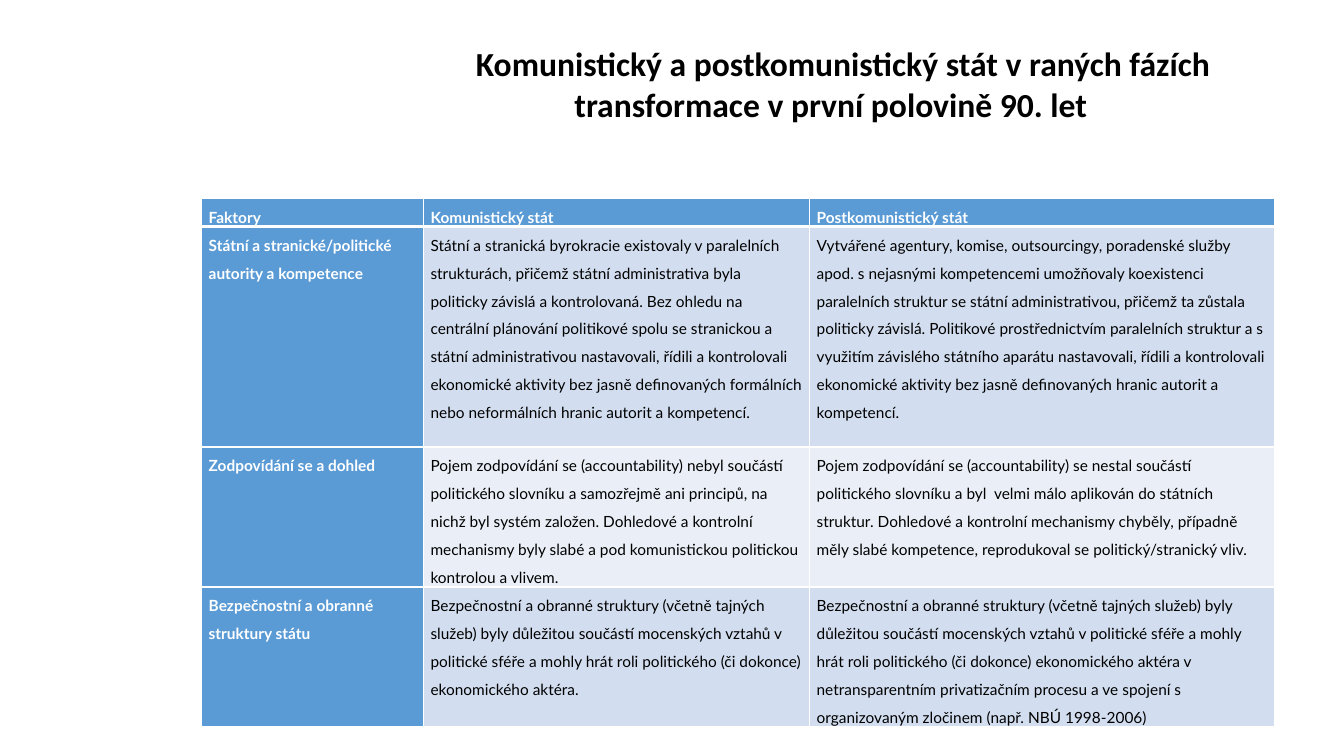
from lxml.etree import SubElement
from pptx import Presentation
from pptx.dml.color import RGBColor
from pptx.enum.text import MSO_VERTICAL_ANCHOR as Anchor, PP_PARAGRAPH_ALIGNMENT as Align
from pptx.oxml.ns import qn
from pptx.util import Cm, Pt

WHITE = RGBColor(0xFF, 0xFF, 0xFF)
BLACK = RGBColor(0x00, 0x00, 0x00)
BLUE = RGBColor(0x5B, 0x9B, 0xD5)
BAND_DARK = RGBColor(0xD2, 0xDE, 0xEF)
BAND_LIGHT = RGBColor(0xEA, 0xEF, 0xF7)

TITLE = "Komunistický a postkomunistický stát v raných fázích transformace v první polovině 90. let"

FACTORS = [
    ("Faktory", "Komunistický stát", "Postkomunistický stát"),
    (
        "Státní a stranické/politické autority a kompetence",
        "Státní a stranická byrokracie existovaly v paralelních strukturách, přičemž státní "
        "administrativa byla politicky závislá a kontrolovaná. Bez ohledu na centrální plánování "
        "politikové spolu se stranickou a státní administrativou nastavovali, řídili a kontrolovali "
        "ekonomické aktivity bez jasně definovaných formálních nebo neformálních hranic autorit "
        "a kompetencí.",
        "Vytvářené agentury, komise, outsourcingy, poradenské služby apod. s nejasnými kompetencemi "
        "umožňovaly koexistenci paralelních struktur se státní administrativou, přičemž ta zůstala "
        "politicky závislá. Politikové prostřednictvím paralelních struktur a s využitím závislého "
        "státního aparátu nastavovali, řídili a kontrolovali ekonomické aktivity bez jasně "
        "definovaných hranic autorit a kompetencí.",
    ),
    (
        "Zodpovídání se a dohled",
        "Pojem zodpovídání se (accountability) nebyl součástí politického slovníku a samozřejmě ani "
        "principů, na nichž byl systém založen. Dohledové a kontrolní mechanismy byly slabé a pod "
        "komunistickou politickou kontrolou a vlivem.",
        "Pojem zodpovídání se (accountability) se nestal součástí politického slovníku a byl  velmi "
        "málo aplikován do státních struktur. Dohledové a kontrolní mechanismy chyběly, případně "
        "měly slabé kompetence, reprodukoval se politický/stranický vliv.",
    ),
    (
        "Bezpečnostní a obranné struktury státu",
        "Bezpečnostní a obranné struktury (včetně tajných služeb) byly důležitou součástí mocenských "
        "vztahů v politické sféře a mohly hrát roli politického (či dokonce) ekonomického aktéra.",
        "Bezpečnostní a obranné struktury (včetně tajných služeb) byly důležitou součástí mocenských "
        "vztahů v politické sféře a mohly hrát roli politického (či dokonce) ekonomického aktéra "
        "v netransparentním privatizačním procesu a ve spojení s organizovaným zločinem "
        "(např. NBÚ 1998-2006)",
    ),
]


class SlideBuilder:
    title_font, title_size = "Calibri", Pt(24)
    table_font, table_size = "Lato", Pt(11)

    def __init__(self, slide):
        self.slide = slide

    def add_run(self, paragraph, text, font, size, color, bold):
        run = paragraph.add_run()
        run.text = text
        run.font.name = font
        run.font.size = size
        run.font.bold = bold
        run.font.color.rgb = color

    def add_title(self, text, left, top, width, height):
        frame = self.slide.shapes.add_textbox(left, top, width, height).text_frame
        frame.word_wrap = True
        frame.vertical_anchor = Anchor.MIDDLE
        heading = frame.paragraphs[0]
        heading.alignment = Align.CENTER
        heading._p.get_or_add_pPr().set("indent", str(Cm(0.61)))
        self.add_run(heading, text, self.title_font, self.title_size, BLACK, True)

    def add_border(self, cell, side, width):
        line = SubElement(cell._tc.get_or_add_tcPr(), qn(f"a:ln{side}"), w=str(Pt(width)))
        fill = SubElement(line, qn("a:solidFill"))
        SubElement(fill, qn("a:srgbClr"), val=str(WHITE))

    def fill_cell(self, cell, text, row, column):
        is_header = row == 0
        is_label = is_header or column == 0
        cell.margin_left = cell.margin_right = Cm(0.18)
        cell.margin_top = cell.margin_bottom = 0
        cell.vertical_anchor = Anchor.BOTTOM if is_header else Anchor.TOP
        widths = {"L": 1, "R": 1, "T": 3 if row == 1 else 1, "B": 3 if is_header else 1}
        for side, width in widths.items():
            self.add_border(cell, side, width)
        cell.fill.solid()
        band = BAND_DARK if row % 2 else BAND_LIGHT
        cell.fill.fore_color.rgb = BLUE if is_label else band
        paragraph = cell.text_frame.paragraphs[0]
        paragraph.line_spacing = 1.5
        paragraph.space_after = Pt(6)
        color = WHITE if is_label else BLACK
        self.add_run(paragraph, text, self.table_font, self.table_size, color, is_label)

    def add_table(self, rows, left, top, column_widths, row_heights):
        table = self.slide.shapes.add_table(
            len(rows), len(column_widths), left, top, sum(column_widths), sum(row_heights)
        ).table
        for column, width in zip(table.columns, column_widths):
            column.width = width
        for r, (texts, height) in enumerate(zip(rows, row_heights)):
            table.rows[r].height = height
            for c, text in enumerate(texts):
                self.fill_cell(table.cell(r, c), text, r, c)


def main():
    deck = Presentation()
    deck.slide_width, deck.slide_height = Cm(33.87), Cm(19.05)
    builder = SlideBuilder(deck.slides.add_slide(deck.slide_layouts[6]))
    builder.add_table(
        FACTORS,
        Cm(5.08),
        Cm(5),
        [Cm(5.59), Cm(9.73), Cm(11.73)],
        [Cm(0.61), Cm(5.56), Cm(3.45), Cm(3.45)],
    )
    builder.add_title(TITLE, Cm(10.49), Cm(-0.79), Cm(20.9), Cm(5.79))
    deck.save("out.pptx")


if __name__ == "__main__":
    main()
